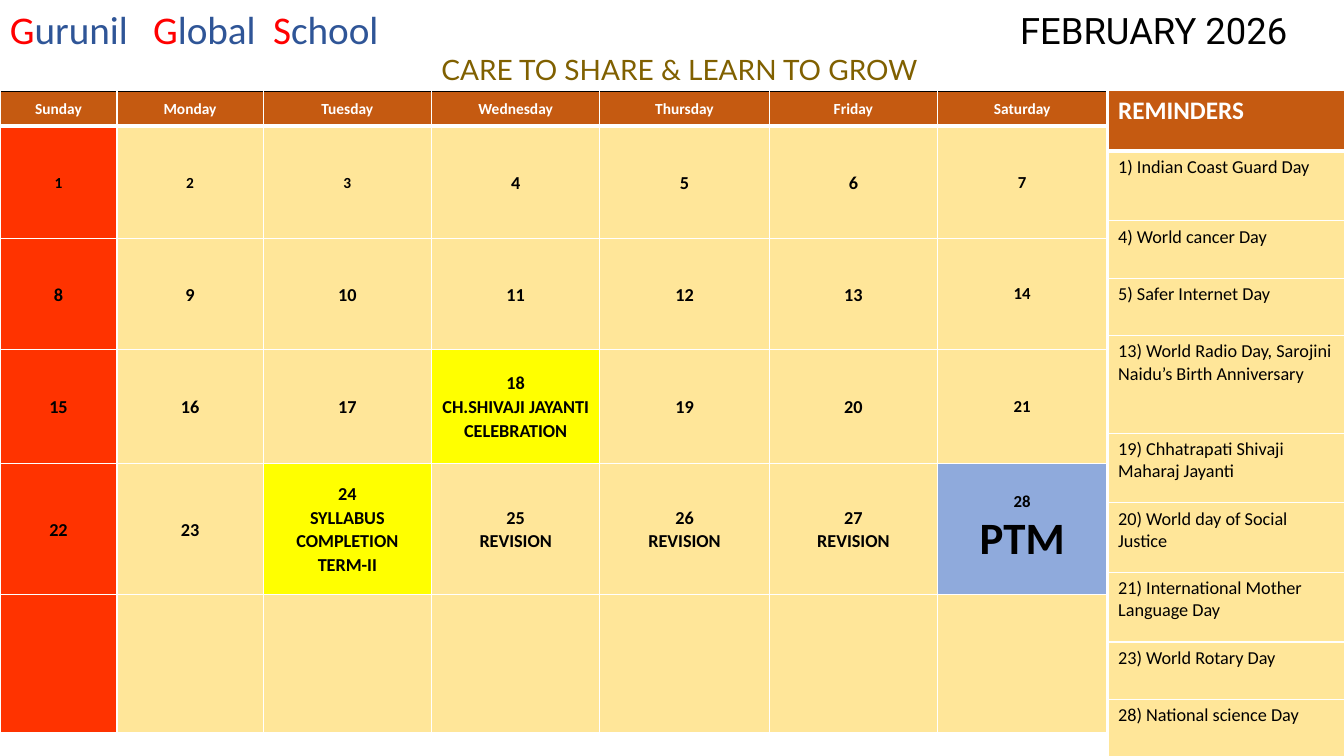
from lxml.etree import SubElement
from pptx import Presentation
from pptx.dml.color import RGBColor
from pptx.enum.shapes import MSO_SHAPE as Shape
from pptx.enum.text import MSO_ANCHOR as Anchor, PP_ALIGN as Align
from pptx.oxml.ns import qn
from pptx.util import Pt

PX = 9144  # one hundred px to the inch
RUST, SAND, RED, YELLOW, BLUE = "C55A11", "FFE699", "FF3300", "FFFF00", "8FAADC"
BLACK, WHITE = "000000", "FFFFFF"


def color(hex_code):
    return RGBColor.from_string(hex_code)


class CalendarSlide:
    font = "Calibri"

    def __init__(self, presentation):
        self.slide = presentation.slides.add_slide(presentation.slide_layouts[6])

    def style(self, font, size, hex_code, bold=False, name=None):
        font.name, font.size, font.bold = name or self.font, Pt(size), bold
        font.color.rgb = color(hex_code)

    def text_box(self, left, top, width, height):
        box = self.slide.shapes.add_textbox(left * PX, top * PX, width * PX, height * PX)
        box.text_frame.word_wrap = True
        return box.text_frame.paragraphs[0]

    def rectangle(self, left, top, width, height, fill):
        shape = self.slide.shapes.add_shape(
            Shape.RECTANGLE, left * PX, top * PX, width * PX, height * PX)
        shape.shadow.inherit = False
        shape.fill.solid()
        shape.fill.fore_color.rgb = color(fill)
        shape.line.fill.background()
        shape.text_frame.vertical_anchor = Anchor.TOP
        return shape.text_frame.paragraphs[0]

    def tab_stops(self, paragraph, positions):
        tabs = SubElement(paragraph._p.get_or_add_pPr(), qn("a:tabLst"))
        for position in positions:
            SubElement(tabs, qn("a:tab"), pos=str(position * PX), algn="l")

    def table(self, left, top, widths, heights):
        frame = self.slide.shapes.add_table(
            len(heights), len(widths), left * PX, top * PX,
            sum(widths) * PX, sum(heights) * PX)
        table = frame.table
        table.first_row = table.horz_banding = False
        for column, width in zip(table.columns, widths):
            column.width = width * PX
        for row, height in zip(table.rows, heights):
            row.height = height * PX
        return table

    def borders(self, cell, row, top_color):
        """The line below the header row is thick, all others are thin."""
        lines = {"L": (WHITE, 1), "R": (WHITE, 1),
                 "T": (top_color if row == 0 else WHITE, 3 if row == 1 else 1),
                 "B": (WHITE, 3 if row == 0 else 1)}
        properties = cell._tc.get_or_add_tcPr()
        for side, (hex_code, points) in lines.items():
            line = SubElement(properties, qn(f"a:ln{side}"), w=str(Pt(points)))
            fill = SubElement(line, qn("a:solidFill"))
            SubElement(fill, qn("a:srgbClr"), val=hex_code)

    def cell(self, table, row, column, lines, fill, top_color=WHITE,
             hex_code=BLACK, bold=True, align=Align.LEFT, spacing=None):
        """Lines are pairs of text and size."""
        cell = table.cell(row, column)
        self.borders(cell, row, top_color)
        cell.fill.solid()
        cell.fill.fore_color.rgb = color(fill)
        frame = cell.text_frame
        for index, (text, size) in enumerate(lines):
            paragraph = frame.add_paragraph() if index else frame.paragraphs[0]
            paragraph.text = text
            paragraph.alignment = align
            paragraph.line_spacing = spacing
            self.style(paragraph.font, size, hex_code, bold)
        return cell

    def centered_cell(self, *args, **options):
        cell = self.cell(*args, align=Align.CENTER, top_color=BLACK, **options)
        cell.vertical_anchor = Anchor.MIDDLE
        cell.margin_left = cell.margin_right = 7 * PX
        cell.margin_top = cell.margin_bottom = 0


WEEKDAYS = ["Sunday", "Monday", "Tuesday", "Wednesday", "Thursday", "Friday", "Saturday"]
SATURDAY = 6
LAST_DAY = 28
EVENTS = {
    18: ["CH.SHIVAJI JAYANTI CELEBRATION"],
    24: ["SYLLABUS COMPLETION", "TERM-II"],
    25: ["REVISION"],
    26: ["REVISION"],
    27: ["REVISION"],
    28: ["PTM"],
}
HIGHLIGHTS = {18: YELLOW, 24: YELLOW, 28: BLUE}
REMINDERS = [
    "1) Indian Coast Guard Day",
    "4) World cancer Day",
    "5) Safer Internet Day",
    "13) World Radio Day, Sarojini Naidu’s Birth Anniversary",
    "19) Chhatrapati Shivaji Maharaj Jayanti",
    "20) World day of Social Justice",
    "21) International Mother Language Day",
    "23) World Rotary Day",
    "28) National science Day",
]


def day_lines(day, column):
    if day > LAST_DAY:
        return []
    size = 12 if column == SATURDAY else 11 if day <= 3 else 13
    event_size = 32 if column == SATURDAY else size
    return [(str(day), size)] + [(event, event_size) for event in EVENTS.get(day, [])]


def main():
    presentation = Presentation()
    presentation.slide_width, presentation.slide_height = 1333 * PX, 750 * PX
    page = CalendarSlide(presentation)

    # Month calendar
    calendar = page.table(0, 91, [116, 145, 167, 167, 168, 167, 168],
                          [34, 112, 110, 113, 130, 137])
    for column, weekday in enumerate(WEEKDAYS):
        page.centered_cell(calendar, 0, column, [(weekday, 11)], RUST,
                           hex_code=WHITE, spacing=1.07)
        for week in range(5):
            day = week * 7 + column + 1
            fill = HIGHLIGHTS.get(day, RED if column == 0 else SAND)
            page.centered_cell(calendar, week + 1, column, day_lines(day, column), fill,
                               spacing=None if column == SATURDAY else 1.07)

    # Motto
    motto = page.text_box(369, 47, 610, 45)
    motto.text = "CARE TO SHARE & LEARN TO GROW"
    motto.alignment = Align.CENTER
    page.style(motto.font, 20, "806000", name="Lato")

    # Month
    month = page.rectangle(956, 0, 377, 55, WHITE)
    month.text = "FEBRUARY 2026"
    month.alignment = Align.CENTER
    month.line_spacing, month.space_after = 1.07, Pt(8)
    page.style(month.font, 26, BLACK, name="Roboto")

    # School name with red initials
    school = page.text_box(0, 0, 408, 64)
    page.tab_stops(school, [142, 261])
    for word in ["Gurunil\t", "Global\t", "School"]:
        for text, hex_code in [(word[0], "FF0000"), (word[1:], "2F5597")]:
            run = school.add_run()
            run.text = text
            page.style(run.font, 28, hex_code)

    # Reminders
    reminders = page.table(1099, 90, [235], [60, 69, 57, 57, 97, 69, 69, 69, 57, 57])
    page.cell(reminders, 0, 0, [("REMINDERS", 18)], RUST, hex_code=WHITE)
    for row, reminder in enumerate(REMINDERS, 1):
        page.cell(reminders, row, 0, [(reminder, 13)], SAND, bold=False)

    presentation.save("out.pptx")


if __name__ == "__main__":
    main()
